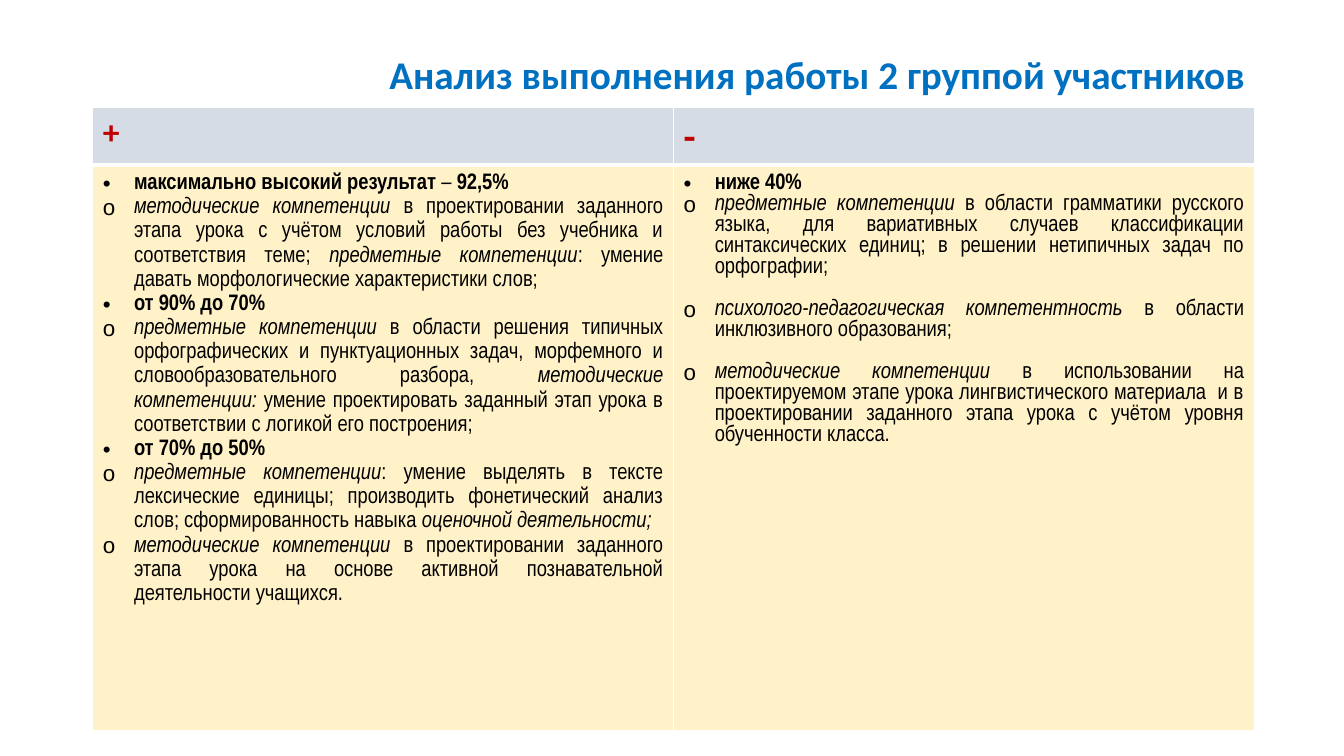
from lxml import etree
from pptx import Presentation
from pptx import util as u
from pptx.dml.color import RGBColor
from pptx.enum import text
from pptx.oxml.ns import qn

TITLE = "Анализ выполнения работы 2 группой участников"
HEADERS = [("+", 24), ("-", 28)]
# Each item: level, text. Asterisks mark italics in details, plain weight in headings.
STRENGTHS = [
    ("heading", "максимально высокий результат* – *92,5%"),
    ("detail", "*методические компетенции* в проектировании заданного этапа урока с учётом условий "
     "работы без учебника и соответствия теме; *предметные компетенции*: умение давать "
     "морфологические характеристики слов;"),
    ("heading", "от 90% до 70%"),
    ("detail", "*предметные компетенции* в области решения типичных орфографических и пунктуационных "
     "задач, морфемного и словообразовательного разбора, *методические компетенции:* умение "
     "проектировать заданный этап урока в соответствии с логикой его построения;"),
    ("heading", "от 70% до 50%"),
    ("detail", "*предметные компетенции*: умение выделять в тексте лексические единицы; производить "
     "фонетический анализ слов; сформированность навыка *оценочной деятельности;*"),
    ("detail", "*методические компетенции* в проектировании заданного этапа урока на основе активной "
     "познавательной деятельности учащихся."),
]
WEAKNESSES = [
    ("heading", "ниже 40%"),
    ("detail", "*предметные компетенции* в области грамматики русского языка, для вариативных случаев "
     "классификации синтаксических единиц; в решении нетипичных задач по орфографии;"),
    ("detail", "*психолого-педагогическая компетентность* в области инклюзивного образования;"),
    ("detail", "*методические компетенции *в использовании на проектируемом этапе урока "
     "лингвистического материала  и в проектировании заданного этапа урока с учётом уровня "
     "обученности класса."),
]
# Items, line spacing of details, points after each detail
COLUMNS = [(STRENGTHS, 1.15, 0), (WEAKNESSES, 1.0, 15)]
BULLETS = {"heading": "•", "detail": "o"}

WIDTH, HEIGHT = 13.33, 7.5
LEFT, TITLE_TOP, TABLE_TOP = 0.92, 0.4, 1.07
COLUMN_WIDTH, ROW_HEIGHTS = 5.76, (0.56, 5.54)
INDENT = u.Inches(0.31)
BLUE, RED, BLACK, WHITE = "0070C0", "C00000", "000000", "FFFFFF"
ROW_FILLS = ("D6DCE5", "FFF2C9")
THIN, THICK = 1, 3


def color(value):
    return RGBColor.from_string(value)


def add_span(para, words, size, name, tint, **format_values):
    span = para.add_run()
    span.text = words
    values = {"size": u.Pt(size), "name": name, **format_values}
    for key, value in values.items():
        setattr(span.font, key, value)
    span.font.color.rgb = color(tint)


def add_bullet(para, char):
    props = para._p.get_or_add_pPr()
    props.set("marL", str(INDENT))
    props.set("indent", str(-INDENT))
    etree.SubElement(props, qn("a:buFont"), typeface="Arial")
    etree.SubElement(props, qn("a:buChar"), char=char)


def paint_cell(cell, fill, top, bottom):
    """Fill a cell and draw white borders; top and bottom are widths in points."""
    cell.fill.solid()
    cell.fill.fore_color.rgb = color(fill)
    props = cell._tc.get_or_add_tcPr()
    sides = [("L", THIN), ("R", THIN), ("T", top), ("B", bottom)]
    for index, (side, width) in enumerate(sides):
        line = etree.Element(qn(f"a:ln{side}"), w=str(u.Pt(width)))
        paint = etree.SubElement(line, qn("a:solidFill"))
        etree.SubElement(paint, qn("a:srgbClr"), val=WHITE)
        props.insert(index, line)


def fill_list(frame, items, detail_spacing, gap):
    for index, (level, marked) in enumerate(items):
        para = frame.add_paragraph() if index else frame.paragraphs[0]
        heading = level == "heading"
        para.alignment = text.PP_ALIGN.JUSTIFY
        para.line_spacing = 1.15 if heading else detail_spacing
        if gap and not heading and index < len(items) - 1:
            para.space_after = u.Pt(gap)
        add_bullet(para, BULLETS[level])
        for part, words in enumerate(marked.split("*")):
            if words:
                marked_part = part % 2 == 1
                add_span(para, words, 16, "Arial Narrow", BLACK,
                         bold=heading and not marked_part,
                         italic=marked_part and not heading)


def add_title(page):
    box = page.shapes.add_textbox(u.Inches(LEFT), u.Inches(TITLE_TOP),
                                  u.Inches(2 * COLUMN_WIDTH), u.Inches(1.45))
    frame = box.text_frame
    frame.word_wrap = True
    frame.margin_top = u.Inches(0.15)
    para = frame.paragraphs[0]
    para.alignment = text.PP_ALIGN.RIGHT
    para.line_spacing = 0.9
    add_span(para, TITLE, 28, "Calibri", BLUE, bold=True)


def add_comparison(page):
    table = page.shapes.add_table(
        len(ROW_HEIGHTS), len(COLUMNS), u.Inches(LEFT), u.Inches(TABLE_TOP),
        u.Inches(COLUMN_WIDTH * len(COLUMNS)), u.Inches(sum(ROW_HEIGHTS))).table
    table.horz_banding = False
    for row, height in zip(table.rows, ROW_HEIGHTS):
        row.height = u.Inches(height)
    for index, ((sign, size), column) in enumerate(zip(HEADERS, COLUMNS)):
        table.columns[index].width = u.Inches(COLUMN_WIDTH)
        head, body = table.cell(0, index), table.cell(1, index)
        paint_cell(head, ROW_FILLS[0], THIN, THICK)
        paint_cell(body, ROW_FILLS[1], THICK, THIN)
        add_span(head.text_frame.paragraphs[0], sign, size, "Calibri", RED, bold=True)
        fill_list(body.text_frame, *column)


def main():
    deck = Presentation()
    deck.slide_width, deck.slide_height = u.Inches(WIDTH), u.Inches(HEIGHT)
    page = deck.slides.add_slide(deck.slide_layouts[6])
    add_title(page)
    add_comparison(page)
    deck.save("out.pptx")


if __name__ == "__main__":
    main()
